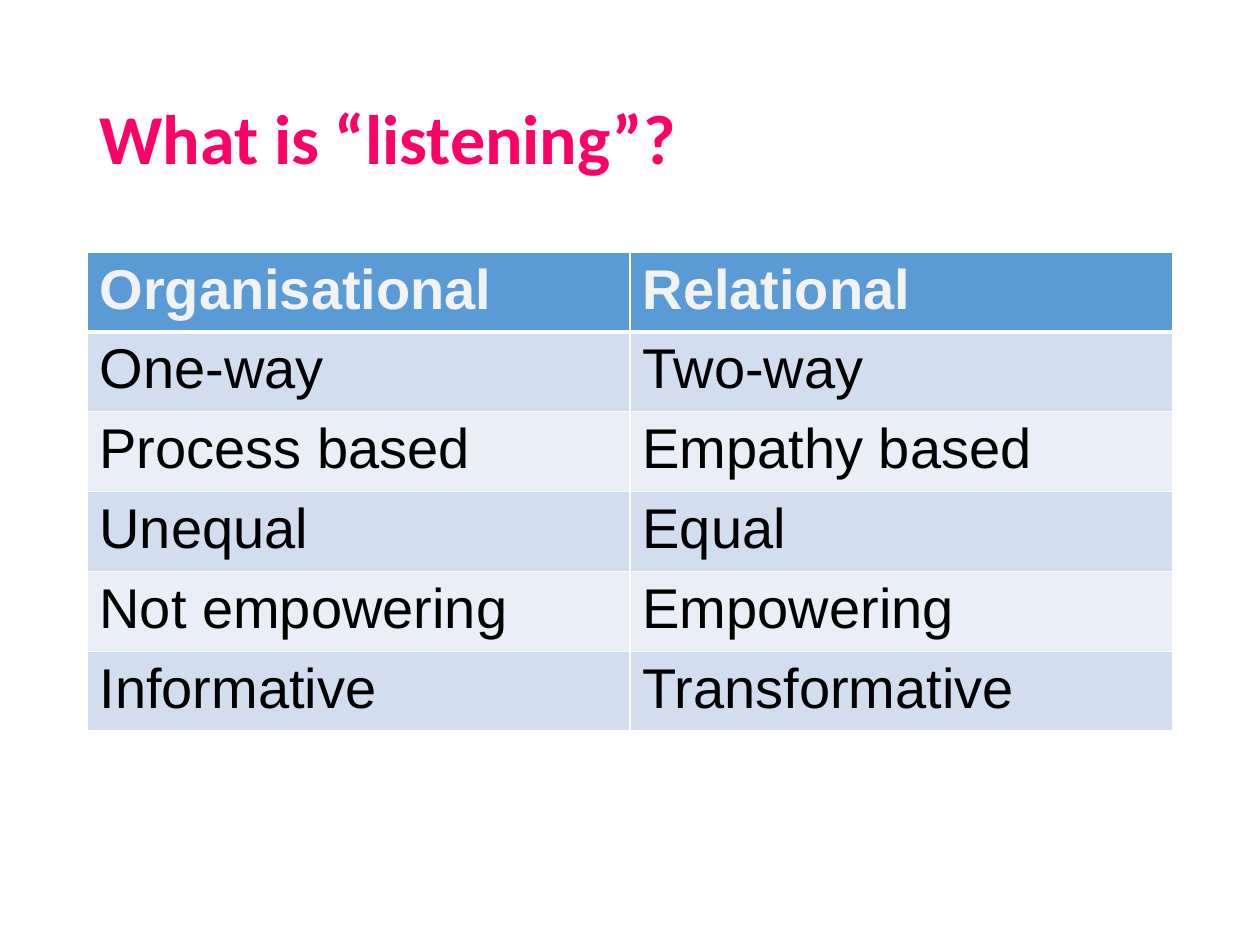
"""Build the slide that contrasts organisational and relational listening."""
from dataclasses import dataclass

from lxml import etree
from pptx import Presentation
from pptx.dml.color import RGBColor
from pptx.enum.text import MSO_ANCHOR, PP_ALIGN
from pptx.oxml.ns import qn
from pptx.util import Inches, Pt

MIDDLE = MSO_ANCHOR.MIDDLE
LEFT = PP_ALIGN.LEFT

TITLE = "What is “listening”?"
ROWS = [
    ("Organisational", "Relational"),
    ("One-way", "Two-way"),
    ("Process based", "Empathy based"),
    ("Unequal", "Equal"),
    ("Not empowering", "Empowering"),
    ("Informative", "Transformative"),
]


@dataclass(frozen=True)
class Theme:
    title: tuple = ("Calibri", 40, True, "FF0066")
    header: tuple = ("Arial", 32, True, "F2F2F2")
    body: tuple = ("Arial", 32, False, "000000")
    header_fill: str = "5B9BD5"
    bands: tuple = ("D2DEEF", "EAEFF7")
    border: str = "FFFFFF"
    thin: int = 1
    thick: int = 3


THEME = Theme()
PAGE_WIDTH, PAGE_HEIGHT = 10, 7.5
MARGIN = 0.69
CONTENT_WIDTH = PAGE_WIDTH - 2 * MARGIN
TITLE_TOP, TITLE_HEIGHT = 0.4, 1.45
TABLE_TOP, ROW_HEIGHT = 2, 0.6


def write(frame, text, style):
    """Put one styled paragraph into a text frame."""
    name, size, bold, color = style
    para = frame.paragraphs[0]
    para.alignment = LEFT
    span = para.add_run()
    span.text = text
    for key, value in {"name": name, "size": Pt(size), "bold": bold}.items():
        setattr(span.font, key, value)
    span.font.color.rgb = RGBColor.from_string(color)
    return para


def set_borders(cell, widths):
    """Draw the cell's edges, given widths in points by edge tag."""
    properties = cell._tc.get_or_add_tcPr()
    for index, (edge, width) in enumerate(widths.items()):
        line = etree.Element(qn(f"a:{edge}"), w=str(Pt(width)))
        fill = etree.SubElement(line, qn("a:solidFill"))
        etree.SubElement(fill, qn("a:srgbClr"), val=THEME.border)
        properties.insert(index, line)


def add_title(page):
    """Add the heading box."""
    box = page.shapes.add_textbox(
        *map(Inches, (MARGIN, TITLE_TOP, CONTENT_WIDTH, TITLE_HEIGHT))
    )
    for key, value in {"word_wrap": True, "vertical_anchor": MIDDLE}.items():
        setattr(box.text_frame, key, value)
    write(box.text_frame, TITLE, THEME.title).line_spacing = 0.9


def add_comparison(page):
    """Add the banded comparison table."""
    area = (MARGIN, TABLE_TOP, CONTENT_WIDTH, ROW_HEIGHT * len(ROWS))
    table = page.shapes.add_table(
        len(ROWS), len(ROWS[0]), *map(Inches, area)
    ).table
    for row, texts in enumerate(ROWS):
        is_header = row == 0
        style = THEME.header if is_header else THEME.body
        fill = THEME.header_fill if is_header else THEME.bands[(row - 1) % 2]
        widths = {
            "lnL": THEME.thin,
            "lnR": THEME.thin,
            "lnT": THEME.thick if row == 1 else THEME.thin,
            "lnB": THEME.thick if is_header else THEME.thin,
        }
        for column, text in enumerate(texts):
            cell = table.cell(row, column)
            write(cell.text_frame, text, style)
            cell.fill.solid()
            cell.fill.fore_color.rgb = RGBColor.from_string(fill)
            set_borders(cell, widths)


def main():
    """Build and save the deck."""
    deck = Presentation()
    deck.slide_width, deck.slide_height = Inches(PAGE_WIDTH), Inches(PAGE_HEIGHT)
    page = deck.slides.add_slide(deck.slide_layouts[6])
    add_title(page)
    add_comparison(page)
    deck.save("out.pptx")


if __name__ == "__main__":
    main()
